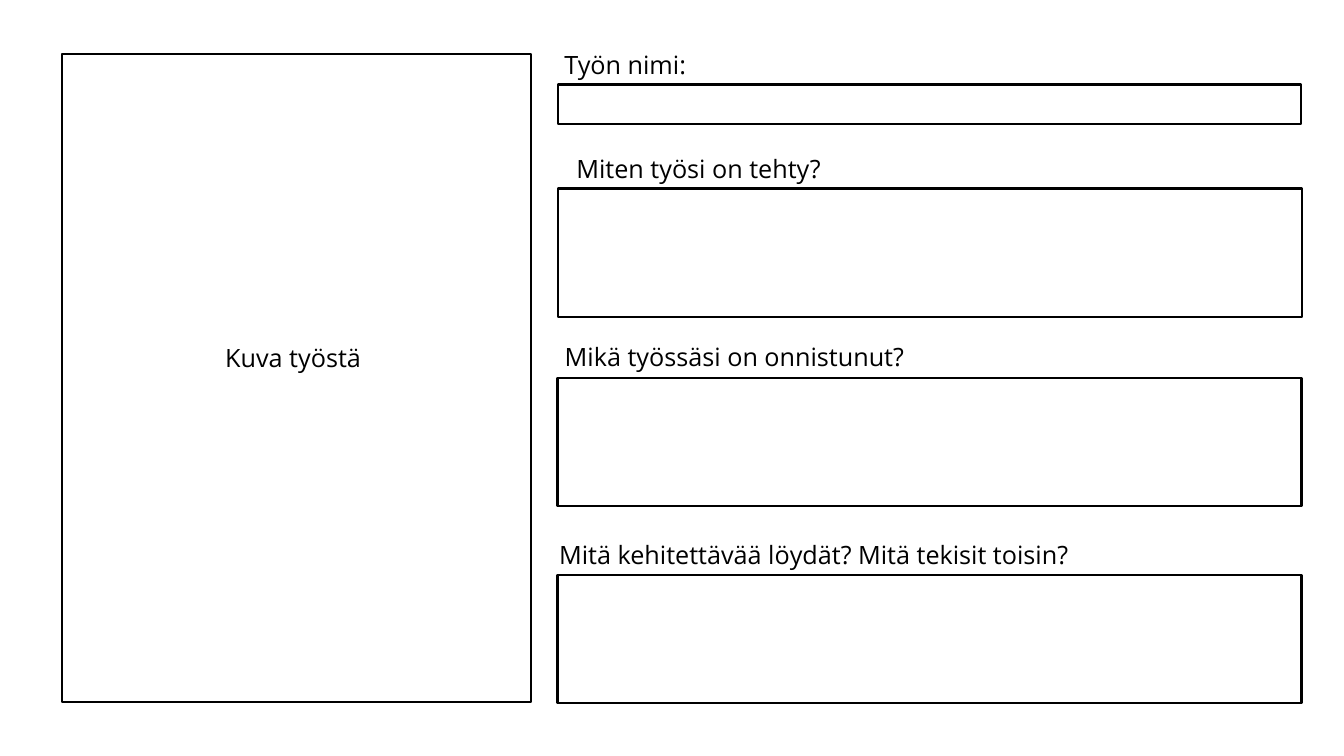
from dataclasses import dataclass

from pptx import Presentation
from pptx import util as u
from pptx.dml.color import RGBColor
from pptx.enum import shapes, text


@dataclass(frozen=True)
class Theme:
    font: str = "Open Sans"
    label_size: int = 18
    line_width: float = 1.5
    ink: RGBColor = RGBColor(0x00, 0x00, 0x00)
    paper: RGBColor = RGBColor(0xFF, 0xFF, 0xFF)


class Worksheet:
    """Draws frames and labels on one slide in one style."""

    def __init__(self, slide, theme):
        self.slide = slide
        self.theme = theme

    def frame(self, *box):
        shape = self.slide.shapes.add_shape(
            shapes.MSO_SHAPE.RECTANGLE, *map(u.Cm, box))
        shape.shadow.inherit = False
        shape.fill.solid()
        shape.fill.fore_color.rgb = self.theme.paper
        shape.line.color.rgb = self.theme.ink
        shape.line.width = u.Pt(self.theme.line_width)

    def label(self, wording, left, top, width):
        shape = self.slide.shapes.add_textbox(
            *map(u.Cm, (left, top, width, LABEL_HEIGHT)))
        frame = shape.text_frame
        frame.word_wrap = True
        frame.auto_size = text.MSO_AUTO_SIZE.SHAPE_TO_FIT_TEXT
        paragraph = frame.paragraphs[0]
        paragraph.alignment = text.PP_ALIGN.CENTER
        run = paragraph.add_run()
        run.text = wording
        run.font.name = self.theme.font
        run.font.size = u.Pt(self.theme.label_size)
        run.font.color.rgb = self.theme.ink


LABEL_HEIGHT = 1.02

# Answer fields: label, its left, top and width, then the frame below it
FIELDS = [
    ("Työn nimi: ", (10.11, 1.12, 11.46), (14.07, 2.13, 18.72, 0.99)),
    ("Miten työsi on tehty? ", (11.96, 3.73, 11.46), (14.07, 4.75, 18.75, 3.23)),
    ("Mikä työssäsi on onnistunut?", (12.78, 8.48, 11.46), (14.05, 9.53, 18.75, 3.23)),
    ("Mitä kehitettävää löydät? Mitä tekisit toisin?", (12.42, 13.46, 16.18),
     (14.05, 14.48, 18.75, 3.23)),
]


def main():
    presentation = Presentation()
    presentation.slide_width = u.Cm(33.87)
    presentation.slide_height = u.Cm(19.05)
    blank_layout = presentation.slide_layouts[6]
    worksheet = Worksheet(presentation.slides.add_slide(blank_layout), Theme())

    # Space for the work on the left
    worksheet.frame(1.57, 1.37, 11.81, 16.31)
    worksheet.label("Kuva työstä ", 4.83, 8.51, 5.28)

    # Questions on the right
    for wording, label_place, answer_box in FIELDS:
        worksheet.frame(*answer_box)
        worksheet.label(wording, *label_place)

    presentation.save("out.pptx")


if __name__ == "__main__":
    main()
